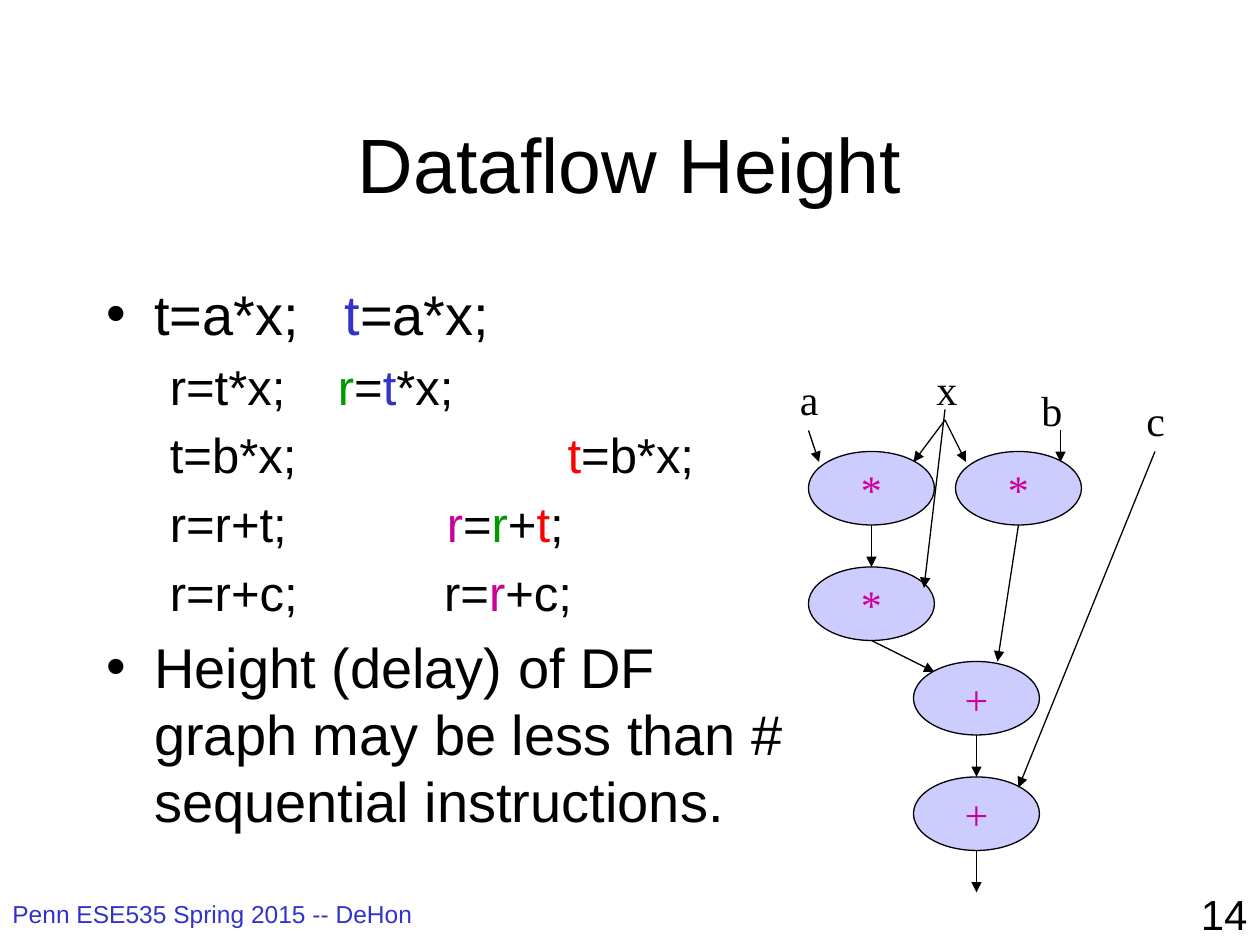
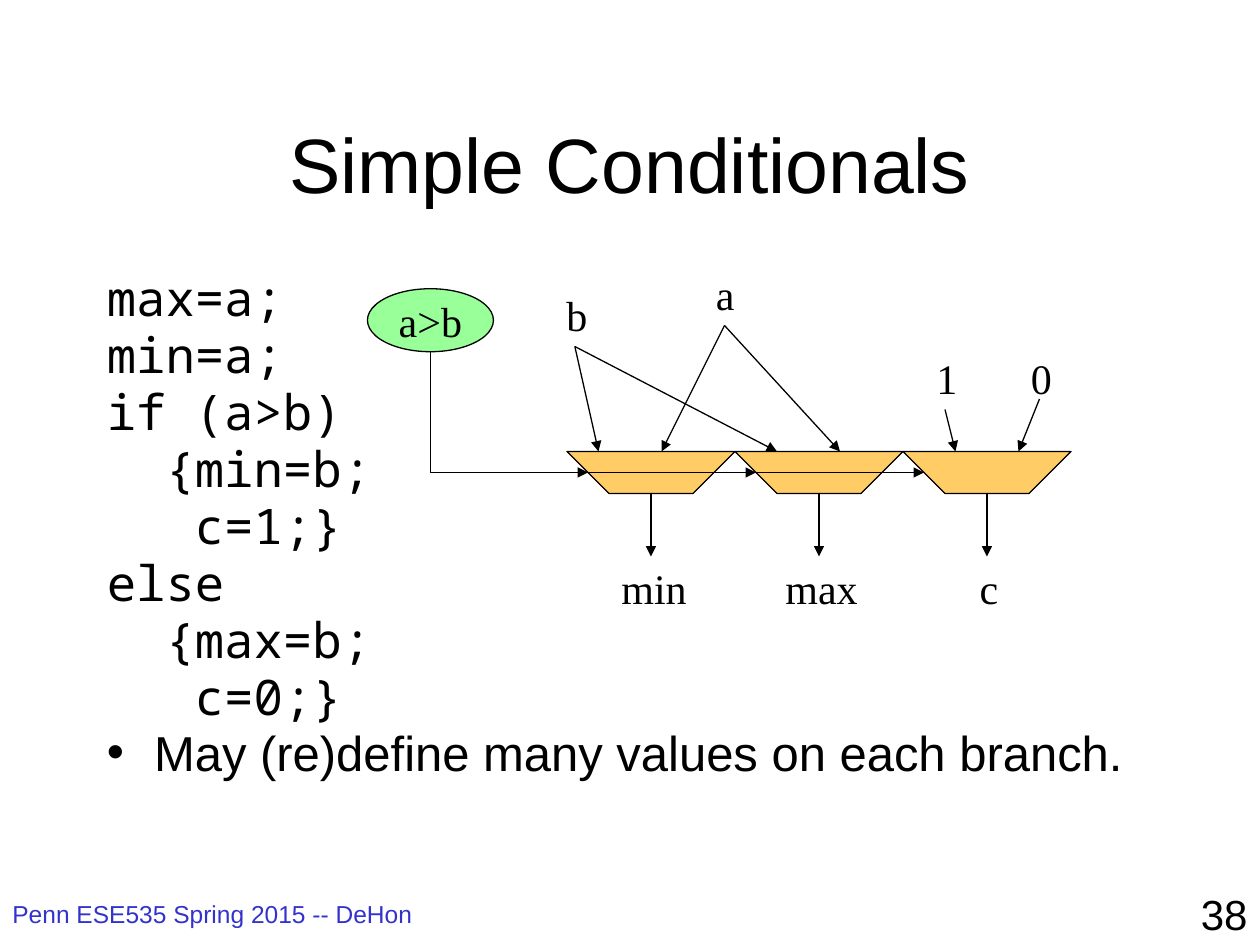
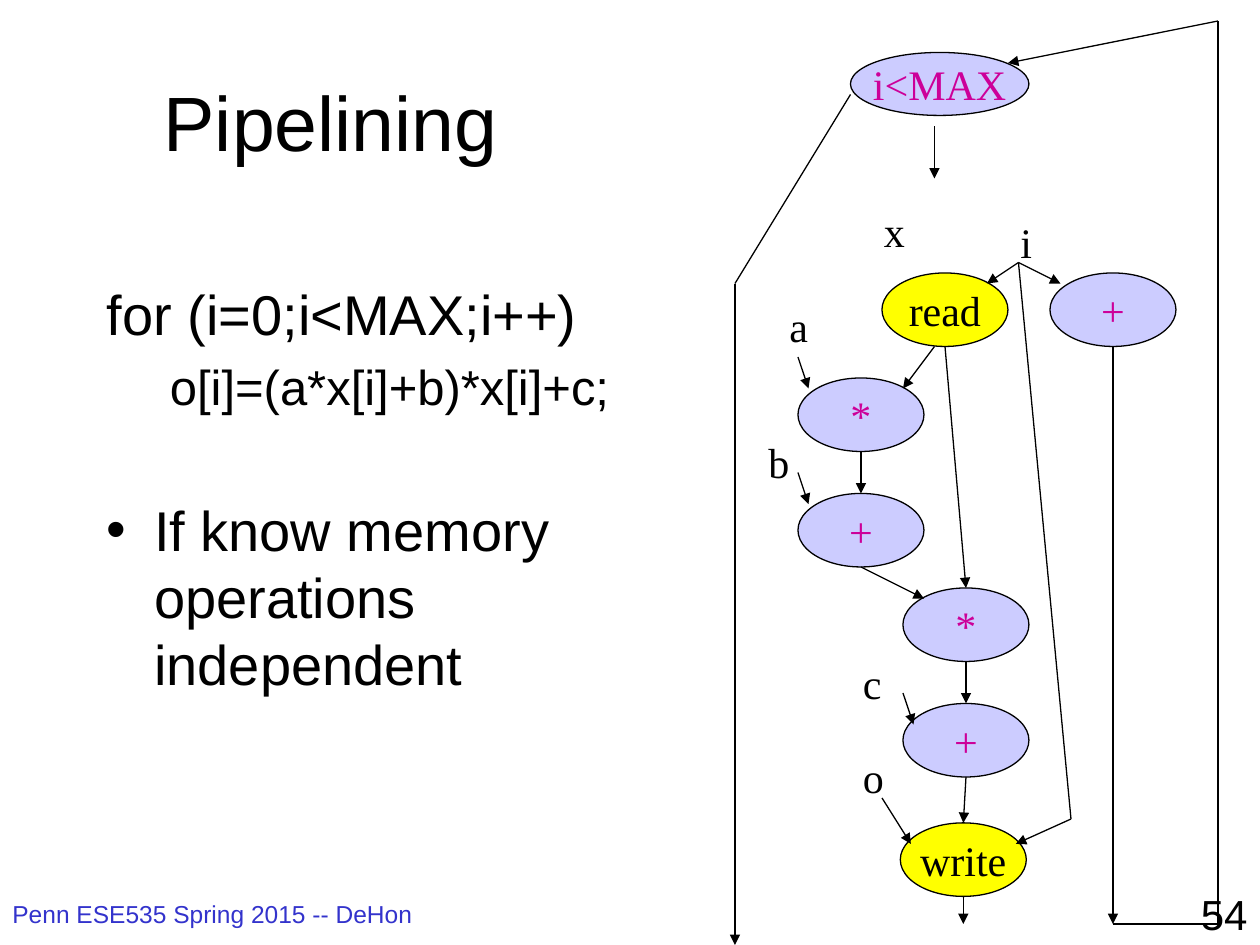
from dataclasses import dataclass

from lxml import etree
from pptx import Presentation
from pptx import util as u
from pptx.dml.color import RGBColor
from pptx.enum import shapes, text
from pptx.oxml.ns import qn

PX = 9525  # EMU in one px, 96 px to the inch


@dataclass(frozen=True)
class Theme:
    black: str = "000000"
    blue: str = "3333CC"
    green: str = "009900"
    red: str = "FF0000"
    magenta: str = "CC0099"
    lilac: str = "CCCCFF"
    yellow: str = "FFFF00"
    mint: str = "99FF99"
    orange: str = "FFCC66"
    sans: str = "Arial"
    serif: str = "Times New Roman"
    mono: str = "Noto Sans Mono"
    title_size: int = 44
    body_size: int = 32
    code_size: int = 28
    label_size: int = 24
    footer_size: int = 14
    line_width: float = 0.75


theme = Theme()
FOOTER = "Penn ESE535 Spring 2015 -- DeHon"
TITLE_BOX = (72, 64, 816, 120)
OVAL = (96, 56)
MUX_WIDTH, MUX_HEIGHT, STEP = 128, 32, 8
LABEL_WIDTHS = {"a": 34, "c": 34, "i": 28, "min": 69, "max": 74}
# Offsets inside an oval or label; negative ones count from the right or bottom.
ANCHORS = {
    "at": (0, 0), "top": (48, 0), "top right": (64, 0),
    "bottom": (48, -0.0), "bottom left": (40, -0.0),
    "far left": (0, 32), "left": (STEP, 16), "right": (-STEP, 16),
    "upper left": (STEP, STEP), "shoulder": (16, STEP), "upper right": (-16, STEP),
    "out": (16, 48), "out high": (16, 40), "out near": (STEP, 40),
    "out far": (24, 40), "side": (32, 32), "far side": (40, 32),
}
# The chain of four operators that two slides share, relative to the first one.
CHAIN = {"first": (0, 0), "second": (0, 88), "third": (80, 160), "fourth": (80, 248)}
CHAIN_ARROWS = [
    "first.bottom > second.top", "second.bottom > third.shoulder",
    "third.bottom > fourth.top", "a.out > first.upper left",
]
# left margin, first-line indent, level, size, font, bullet
LINE_STYLES = {
    "bullet": (36, -36, 0, theme.body_size, theme.sans, True),
    "plain": (36, -36, 0, theme.body_size, theme.sans, False),
    "sub": (78, -30, 1, theme.code_size, theme.sans, False),
    "code": (36, -36, 0, theme.code_size, theme.mono, False),
    "small bullet": (36, -36, 0, theme.code_size, theme.sans, True),
    "renamed": (0, 0, 0, theme.body_size, theme.sans, False),
    "renamed sub": (0, 0, 0, theme.code_size, theme.sans, False),
}
NAME_COLOURS = {"1": theme.blue, "2": theme.green, "3": theme.red, "4": theme.magenta}
OVAL_COLOURS = {  # every other oval is lilac with magenta text
    "a>b": (theme.mint, theme.black),
    "read": (theme.yellow, theme.black),
    "write": (theme.yellow, theme.black),
}

slides = [
    {
        "title": "Dataflow Height", "number": 14, "body_size": (544, 456),
        "body": [
            ("bullet", "t=a*x;"), ("sub", "r=t*x;"), ("sub", "t=b*x;"),
            ("sub", "r=r+t;"), ("sub", "r=r+c;"),
            ("bullet", "Height (delay) of DF graph may be less than # sequential instructions."),
        ],
        # left margin and pieces; a digit after a name picks its colour
        "renamed": [
            (181, ["t1", "=a*x;"]),
            (176, ["r2", "=", "t1", "*x;"]),
            (351, ["t3", "=b*x;"]),
            (259, ["r4", "=", "r2", "+", "t3", ";"]),
            (257, ["r=", "r4", "+c;"]),
        ],
        "chain": (616, 344, "**++"),
        "ovals": {"product": ("*", 728, 344)},
        "labels": {"a": (600, 280), "x": (704, 272), "b": (784, 288), "c": (864, 296)},
        "points": {"split": (720, 312), "exit": (744, 680)},
        "arrows": CHAIN_ARROWS + [
            "product.bottom > third.top right", "fourth.bottom > exit.at",
            "c.out > fourth.upper right", "b.out far > product.upper right",
            "x.out > first.upper right", "x.out > product.upper left",
            "split.at > second.right",
        ],
    },
    {
        "title": "Simple Conditionals", "number": 38, "body_size": (816, 432),
        "line_spacing": 0.8,
        "body": [
            ("code", "max=a;"), ("code", "min=a;"), ("code", "if (a>b)"),
            ("code", "  {min=b;"), ("code", "   c=1;}"), ("code", "else"),
            ("code", "  {max=b;"), ("code", "   c=0;}"),
            ("small bullet", "May (re)define many values on each branch."),
        ],
        "muxes": (432, 344, ["min", "max", "c"]),
        "ovals": {"test": ("a>b", 280, 220, 96, 48)},
        "labels": {"b": (422, 216), "a": (536, 200), "1": (704, 264), "0": (776, 264)},
        "points": {"select": (360, 360)},
        "elbows": ["test.bottom > min select.at"],
        "arrows": [
            "b.out > min left.at", "b.out > max left.at",
            "a.out > min right.at", "a.out > max right.at",
            "1.out > c left.at", "0.out high > c right.at",
            "select.at > max select.at", "select.at > c select.at",
        ],
    },
    {
        "title": "Pipelining", "number": 54, "body_size": (456, 432),
        "title_box": (56, 32, 392, 120), "gap_before_last": 46,
        "body": [
            ("plain", "for (i=0;i<MAX;i++)"), ("sub", "o[i]=(a*x[i]+b)*x[i]+c;"),
            ("bullet", "If know memory operations independent"),
        ],
        "chain": (608, 288, "*+*+"),
        "ovals": {
            "test": ("i<MAX", 648, 40, 136, 48), "increment": ("+", 800, 208),
            "read": ("read", 672, 208), "write": ("write", 686, 627),
        },
        "labels": {
            "a": (592, 224), "b": (576, 328), "c": (648, 496),
            "o": (648, 568), "x": (664, 152), "i": (768, 160),
        },
        "points": {
            "enter": (712, 96), "body": (712, 136), "bend": (816, 624),
            "exit": (734, 704), "back": (848, 704), "corner": (928, 704),
            "peak": (928, 16), "fork": (560, 216), "done": (560, 720),
        },
        "arrows": CHAIN_ARROWS + [
            "fourth.bottom > write.top", "read.bottom left > first.upper right",
            "read.bottom > third.top", "b.side > second.upper left",
            "o.out far > write.left", "c.far side > fourth.left",
            "i.out near > read.upper right", "i.out near > increment.upper left",
            "bend.at > write.right", "increment.bottom > back.at",
            "enter.at > body.at", "write.bottom > exit.at",
            "peak.at > test.upper right", "fork.at > done.at",
        ],
        "lines": [
            "i.out near > bend.at", "back.at > corner.at",
            "corner.at > peak.at", "test.far left > fork.at",
        ],
    },
]


def style_runs(paragraph, size, colour, font):
    for run in paragraph.runs:
        run.font.size = u.Pt(size)
        run.font.name = font
        run.font.color.rgb = RGBColor.from_string(colour)


def locate(boxes, reference):
    """Turn "name.anchor" into a point in px."""
    name, anchor = reference.split(".")
    left, top, width, height = boxes[name]
    across, down = ANCHORS[anchor]
    if anchor.startswith("bottom"):
        down = height
    return left + across + (width if across < 0 else 0), top + down


presentation = Presentation()
presentation.slide_width, presentation.slide_height = 960 * PX, 720 * PX
title_only = presentation.slide_layouts[5]

for content in slides:
    slide = presentation.slides.add_slide(title_only)

    title = slide.shapes.title
    title.left, title.top, title.width, title.height = (
        v * PX for v in content.get("title_box", TITLE_BOX))
    title.text_frame.text = content["title"]
    title.text_frame.auto_size = text.MSO_AUTO_SIZE.NONE
    title.text_frame.vertical_anchor = text.MSO_ANCHOR.MIDDLE
    title.text_frame.paragraphs[0].alignment = text.PP_ALIGN.CENTER
    style_runs(title.text_frame.paragraphs[0], theme.title_size, theme.black, theme.sans)

    for words, box, size, colour, alignment in (
        (FOOTER, (0, 680, 368, 40), theme.footer_size, theme.blue, text.PP_ALIGN.LEFT),
        (str(content["number"]), (760, 672, 200, 48), theme.label_size, theme.black,
         text.PP_ALIGN.RIGHT),
    ):
        frame = slide.shapes.add_textbox(*(v * PX for v in box)).text_frame
        frame.word_wrap = True
        frame.text = words
        frame.paragraphs[0].alignment = alignment
        style_runs(frame.paragraphs[0], size, colour, theme.sans)

    # Body text, and beside it the renamed statements where there are any
    columns = [[(style, None, [words]) for style, words in content["body"]]]
    if "renamed" in content:
        columns.append([("renamed sub" if index else "renamed", margin, pieces)
                        for index, (margin, pieces) in enumerate(content["renamed"])])
    for column in columns:
        width, height = content["body_size"]
        frame = slide.shapes.add_textbox(72 * PX, 208 * PX, width * PX, height * PX).text_frame
        frame.word_wrap = True
        for index, (style, own_margin, pieces) in enumerate(column):
            margin, indent, level, size, font, bullet = LINE_STYLES[style]
            paragraph = frame.add_paragraph() if index else frame.paragraphs[0]
            properties = paragraph._p.get_or_add_pPr()
            properties.set("marL", str((own_margin or margin) * PX))
            properties.set("indent", str(indent * PX))
            if index:
                space = etree.SubElement(properties, qn("a:spcBef"))
                etree.SubElement(space, qn("a:spcPct")).set("val", "20000")
            if bullet:
                etree.SubElement(properties, qn("a:buFont")).set("typeface", theme.sans)
                etree.SubElement(properties, qn("a:buChar")).set("char", "•")
            else:
                etree.SubElement(properties, qn("a:buNone"))
            paragraph.level = level
            if "line_spacing" in content:
                paragraph.line_spacing = content["line_spacing"]
            for piece in pieces:
                coloured = own_margin and piece[-1] in NAME_COLOURS
                paragraph.add_run().text = piece[:-1] if coloured else piece
            style_runs(paragraph, size, theme.black, font)
            for run, piece in zip(paragraph.runs, pieces):
                if own_margin and piece[-1] in NAME_COLOURS:
                    run.font.color.rgb = RGBColor.from_string(NAME_COLOURS[piece[-1]])
        if "gap_before_last" in content:
            paragraph.space_before = u.Pt(content["gap_before_last"])

    ovals = dict(content["ovals"])
    labels = [(name, *place) for name, place in content["labels"].items()]
    boxes = {name: (*place, 0, 0) for name, place in content["points"].items()}
    arrows = list(content["arrows"])

    if "chain" in content:
        left, top, operators = content["chain"]
        for operator, (name, (across, down)) in zip(operators, CHAIN.items()):
            ovals[name] = (operator, left + across, top + down)

    if "muxes" in content:
        first_left, top, results = content["muxes"]
        bottom = top + MUX_HEIGHT
        for index, result in enumerate(results):
            left = first_left + index * MUX_WIDTH
            middle, right = left + MUX_WIDTH // 2, left + MUX_WIDTH
            builder = slide.shapes.build_freeform(left, top, scale=PX)
            builder.add_line_segments([
                (left + MUX_HEIGHT, bottom), (right - MUX_HEIGHT, bottom), (right, top)])
            mux = builder.convert_to_shape()
            mux.shadow.inherit = False
            mux.fill.solid()
            mux.fill.fore_color.rgb = RGBColor.from_string(theme.orange)
            mux.line.color.rgb = RGBColor.from_string(theme.black)
            mux.line.width = u.Pt(theme.line_width)
            for port, x, y in (
                ("left", left + (3 + index) * STEP, top),
                ("right", left + (9 + index) * STEP, top),
                ("select", left + MUX_HEIGHT // 2, top + MUX_HEIGHT // 2),
                ("output", middle, bottom),
                ("end", middle, bottom + 6 * STEP),
            ):
                boxes[f"{result} {port}"] = (x, y, 0, 0)
            arrows.append(f"{result} output.at > {result} end.at")
            label_left = middle + 2 - LABEL_WIDTHS[result] // 2
            labels.append((result, label_left, bottom + 6 * STEP))

    for name, (words, left, top, *size) in ovals.items():
        boxes[name] = (left, top, *(size or OVAL))
        fill, colour = OVAL_COLOURS.get(words, (theme.lilac, theme.magenta))
        oval = slide.shapes.add_shape(shapes.MSO_SHAPE.OVAL, *(v * PX for v in boxes[name]))
        oval.shadow.inherit = False
        oval.fill.solid()
        oval.fill.fore_color.rgb = RGBColor.from_string(fill)
        oval.line.color.rgb = RGBColor.from_string(theme.black)
        oval.line.width = u.Pt(theme.line_width)
        oval.text_frame.word_wrap = False
        oval.text_frame.text = words
        oval.text_frame.vertical_anchor = text.MSO_ANCHOR.MIDDLE
        oval.text_frame.paragraphs[0].alignment = text.PP_ALIGN.CENTER
        style_runs(oval.text_frame.paragraphs[0], theme.label_size, colour, theme.serif)

    for words, left, top in labels:
        boxes[words] = (left, top, LABEL_WIDTHS.get(words, 36), 48)
        label = slide.shapes.add_textbox(*(v * PX for v in boxes[words]))
        label.text_frame.word_wrap = False
        label.text_frame.auto_size = text.MSO_AUTO_SIZE.SHAPE_TO_FIT_TEXT
        label.text_frame.text = words
        style_runs(label.text_frame.paragraphs[0], theme.label_size, theme.black, theme.serif)

    for kind, routes in (("line", content.get("lines", [])), ("arrow", arrows),
                         ("elbow", content.get("elbows", []))):
        for route in routes:
            (x1, y1), (x2, y2) = (locate(boxes, end) for end in route.split(" > "))
            connector_type = shapes.MSO_CONNECTOR.STRAIGHT
            if kind == "elbow":  # the unturned frame of a connector turned by 270 degrees
                connector_type = shapes.MSO_CONNECTOR.ELBOW
                x, y, across, down = (x1 + x2) / 2, (y1 + y2) / 2, (x2 - x1) / 2, (y2 - y1) / 2
                x1, y1, x2, y2 = x + down, y - across, x - down, y + across
            connector = slide.shapes.add_connector(
                connector_type, *(int(v * PX) for v in (x1, y1, x2, y2)))
            connector.line.color.rgb = RGBColor.from_string(theme.black)
            connector.line.width = u.Pt(theme.line_width)
            properties = connector._element.spPr
            if kind != "line":
                outline = properties.find(qn("a:ln"))
                etree.SubElement(outline, qn("a:tailEnd")).set("type", "triangle")
            etree.SubElement(properties, qn("a:effectLst"))
            if kind == "elbow":
                properties.find(qn("a:prstGeom")).set("prst", "bentConnector2")
                properties.find(qn("a:xfrm")).set("rot", str(270 * 60000))

presentation.save("out.pptx")
